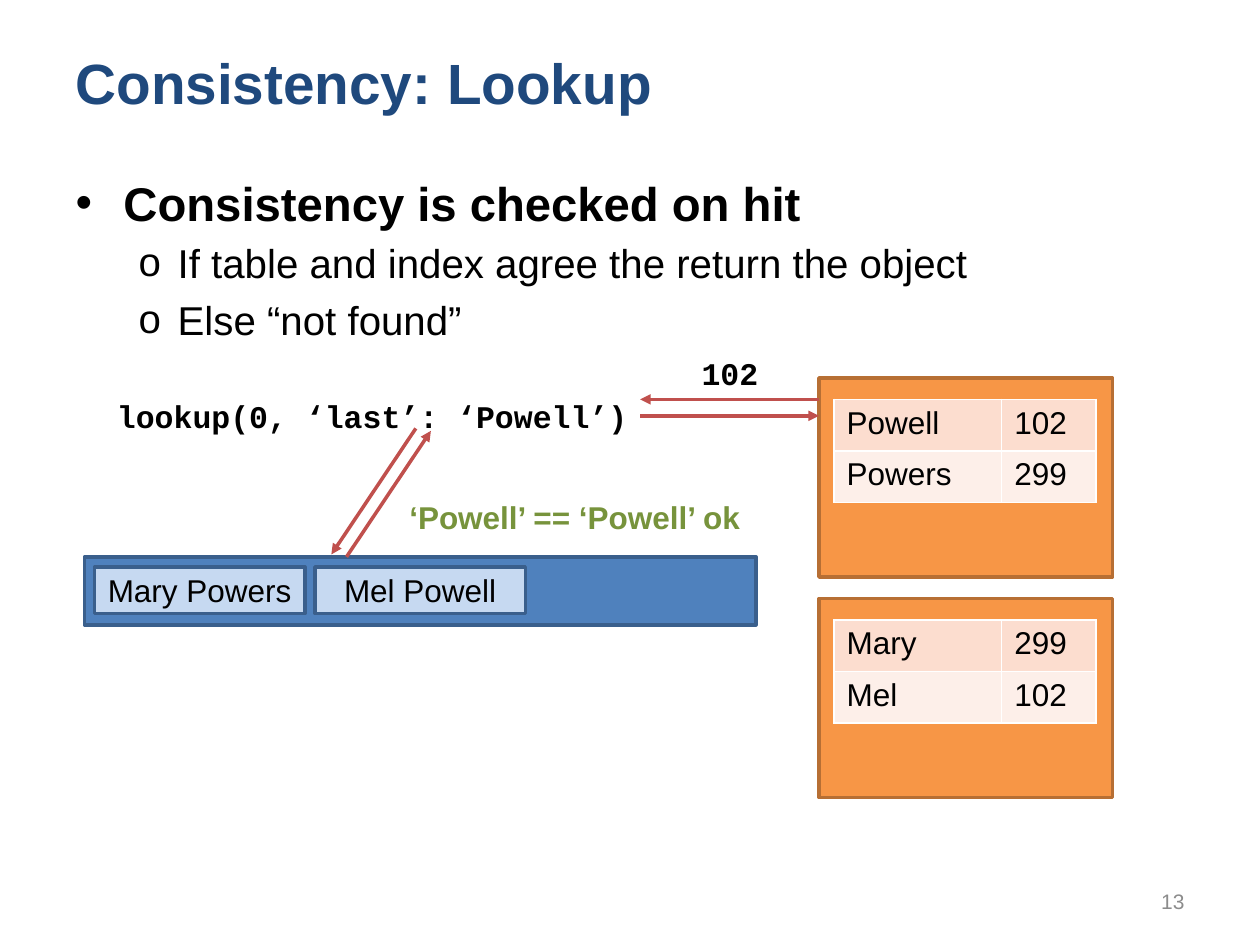
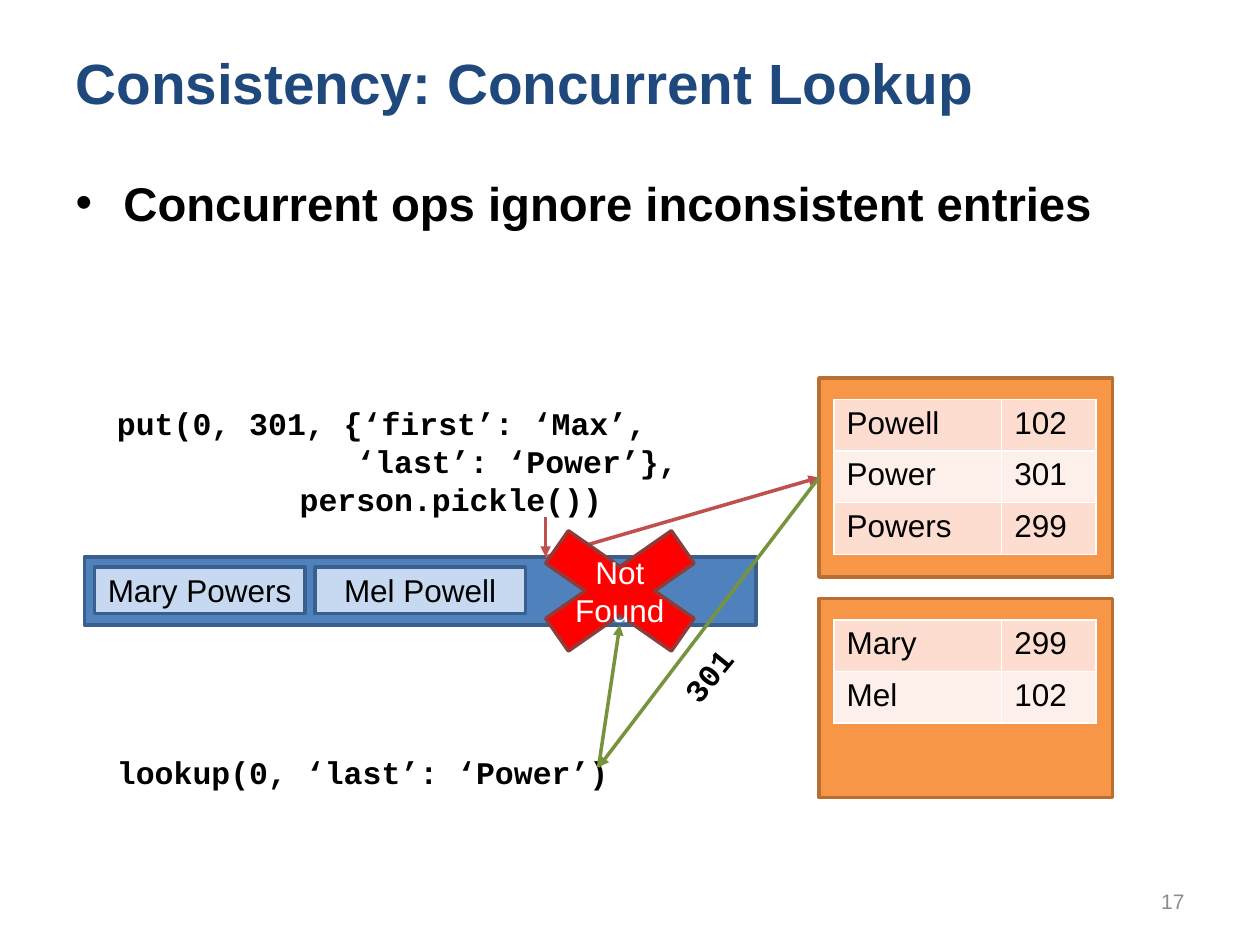
from dataclasses import dataclass

from lxml.etree import SubElement
from pptx import Presentation
from pptx.dml.color import RGBColor
from pptx.enum.shapes import MSO_CONNECTOR, MSO_SHAPE as Shape
from pptx.enum.text import MSO_ANCHOR as Anchor, MSO_AUTO_SIZE as AutoSize, PP_ALIGN as Align
from pptx.oxml.ns import qn
from pptx.util import Inches, Pt


@dataclass(frozen=True)
class Theme:
    sans: str = "Arial"
    mono: str = "Courier New"
    title: str = "1F497D"
    ink: str = "000000"
    white: str = "FFFFFF"
    muted: str = "8C8C8C"
    panel: tuple = ("F79646", "B76F34")
    bar: tuple = ("4F81BD", "3A5F8C")
    record: tuple = ("C6D9F1", "3A5F8C")
    failure: tuple = ("FF0000", "8E3B39")
    bands: tuple = ("FCDDCF", "FDEFE9")
    red: str = "C0504D"
    green: str = "77933C"
    title_size: float = 32.4
    text_size: float = 18
    number_size: float = 12
    stroke: float = 2


THEME = Theme()

# Shared layout, in inches
TITLE_AREA = (0.5, 0.3, 9, 0.7)
BODY_AREA = (0.5, 1.33, 9, 5.37)
NUMBER_AREA = (7.17, 6.95, 2.33, 0.4)
PANEL_LEFT, PANEL_TOP, PANEL_WIDTH, PANEL_HEIGHT, PANEL_PITCH = 6.5, 3, 2.33, 1.58, 1.75
INDEX_INSET = (0.12, 0.17)
INDEX_COLUMNS, INDEX_ROW = (1.33, 0.75), 0.41
BAR_AREA = (0.67, 4.42, 5.33, 0.54)
BAR_INSET, RECORD_WIDTH, RECORD_HEIGHT, RECORD_PITCH = 0.08, 1.67, 0.37, 1.75
CODE_LEFT, CODE_WIDTH, LINE_HEIGHT = 0.83, 8.33, 0.4
ID_WIDTH = 0.67

BAR_TOP = BAR_AREA[1]
BAR_BOTTOM = BAR_TOP + BAR_AREA[3]
PANEL_MIDDLE = PANEL_TOP + PANEL_HEIGHT / 2

# Bullet, left margin, hanging indent, size and weight of each list level
LEVELS = (("•", 0.38, 0.38, 27, True), ("o", 0.81, 0.31, 23, False))

RECORDS = ("Mary Powers", "Mel Powell")
FIRST_NAMES = [("Mary", "299"), ("Mel", "102")]

LOOKUP = {
    "title": "Consistency: Lookup",
    "number": "13",
    "points": [
        (0, "Consistency is checked on hit"),
        (1, "If table and index agree the return the object"),
        (1, "Else “not found”"),
    ],
    "last_names": [("Powell", "102"), ("Powers", "299")],
    # Top of each call, then its lines with their indents
    "calls": [(3.1, [(0, "lookup(0, ‘last’: ‘Powell’)")])],
    "found_id": ("102", 5.47, 2.76, 0),
    "check": ("‘Powell’ == ‘Powell’ ok", (3.15, 3.9, 2.85, LINE_HEIGHT)),
    "arrows": [
        ((5.08, 3.3), (PANEL_LEFT, 3.3), THEME.red),
        ((PANEL_LEFT, 3.17), (5.08, 3.17), THEME.red),
        ((3.3, 3.4), (2.63, 4.4), THEME.red),
        ((2.75, BAR_TOP), (3.42, 3.42), THEME.red),
    ],
}

LOOKUP_END = (4.75, 6.09)
NEW_RECORD = (4.33, BAR_TOP)
CONCURRENT = {
    "title": "Consistency: Concurrent Lookup",
    "number": "17",
    "points": [(0, "Concurrent ops ignore inconsistent entries")],
    "last_names": [("Powell", "102"), ("Power", "301"), ("Powers", "299")],
    "calls": [
        (3.16, [
            (0, "put(0, 301, {‘first’: ‘Max’,"),
            (1.9, "‘last’: ‘Power’},"),
            (1.45, "person.pickle())"),
        ]),
        (5.93, [(0, "lookup(0, ‘last’: ‘Power’)")]),
    ],
    "found_id": ("301", 5.29, 5.15, 309.1),
    "arrows": [
        ((NEW_RECORD[0], 4.1), NEW_RECORD, THEME.red),
        (NEW_RECORD, (PANEL_LEFT, PANEL_MIDDLE), THEME.red),
        (LOOKUP_END, (4.92, BAR_BOTTOM), THEME.green),
    ],
    "failure": ("Not Found", (3.96, 4.02, 1.92, 1.34)),
    "top_arrows": [((PANEL_LEFT, PANEL_MIDDLE), LOOKUP_END, THEME.green)],
}


def inches(area):
    return [Inches(length) for length in area]


def color(value):
    return RGBColor.from_string(value)


def add_span(para, text, size=THEME.text_size, ink=THEME.ink, bold=False, font=THEME.sans):
    span = para.add_run()
    span.text = text
    span.font.name = font
    span.font.size = Pt(size)
    span.font.bold = bold
    span.font.color.rgb = color(ink)


def next_para(frame, index):
    return frame.add_paragraph() if index else frame.paragraphs[0]


def place(shape, area):
    shape.left, shape.top, shape.width, shape.height = inches(area)


def add_box(shapes, kind, area, colors, text=None, ink=THEME.ink):
    box = shapes.add_shape(kind, *inches(area))
    box.shadow.inherit = False
    box.fill.solid()
    box.fill.fore_color.rgb = color(colors[0])
    box.line.color.rgb = color(colors[1])
    box.line.width = Pt(THEME.stroke)
    if text:
        box.text_frame.vertical_anchor = Anchor.MIDDLE
        para = box.text_frame.paragraphs[0]
        para.alignment = Align.CENTER
        add_span(para, text, ink=ink)


def add_text(page, area, lines, wrap=True, **style):
    """Add a text box; lines holds (left indent, text) pairs."""
    box = page.shapes.add_textbox(*inches(area))
    box.text_frame.word_wrap = wrap
    for index, (indent, text) in enumerate(lines):
        para = next_para(box.text_frame, index)
        if indent:
            para._p.get_or_add_pPr().set("marL", str(Inches(indent)))
        add_span(para, text, **style)
    return box


def add_code(page, area, lines):
    return add_text(page, area, lines, bold=True, font=THEME.mono)


def add_arrow(page, start, end, ink):
    arrow = page.shapes.add_connector(MSO_CONNECTOR.STRAIGHT, *inches(start + end))
    arrow.line.color.rgb = color(ink)
    arrow.line.width = Pt(THEME.stroke)
    SubElement(arrow.line._get_or_add_ln(), qn("a:tailEnd"), type="triangle")
    SubElement(arrow._element.spPr, qn("a:effectLst"))


def add_borders(cell):
    properties = cell._tc.get_or_add_tcPr()
    for side in "LRTB":
        edge = SubElement(properties, qn(f"a:ln{side}"), w=str(Pt(1)))
        SubElement(SubElement(edge, qn("a:solidFill")), qn("a:srgbClr"), val=THEME.white)


def add_index(page, position, entries):
    """Add an orange panel with a table of names and record ids."""
    top = PANEL_TOP + position * PANEL_PITCH
    add_box(page.shapes, Shape.RECTANGLE, (PANEL_LEFT, top, PANEL_WIDTH, PANEL_HEIGHT), THEME.panel)
    area = (PANEL_LEFT + INDEX_INSET[0], top + INDEX_INSET[1],
            sum(INDEX_COLUMNS), INDEX_ROW * len(entries))
    table = page.shapes.add_table(len(entries), len(INDEX_COLUMNS), *inches(area)).table
    table.first_row = table.horz_banding = False
    for column, width in zip(table.columns, INDEX_COLUMNS):
        column.width = Inches(width)
    for row, entry in enumerate(entries):
        table.rows[row].height = Inches(INDEX_ROW)
        for column, text in enumerate(entry):
            cell = table.cell(row, column)
            add_borders(cell)
            cell.fill.solid()
            cell.fill.fore_color.rgb = color(THEME.bands[row % 2])
            add_span(cell.text_frame.paragraphs[0], text)


def add_records(page):
    group = page.shapes.add_group_shape()
    add_box(group.shapes, Shape.RECTANGLE, BAR_AREA, THEME.bar)
    for index, name in enumerate(RECORDS):
        left = BAR_AREA[0] + BAR_INSET + index * RECORD_PITCH
        area = (left, BAR_TOP + BAR_INSET, RECORD_WIDTH, RECORD_HEIGHT)
        add_box(group.shapes, Shape.RECTANGLE, area, THEME.record, name)


def fill_title(page, text):
    title = page.shapes.title
    place(title, TITLE_AREA)
    title.text_frame.auto_size = AutoSize.NONE
    title.text_frame.vertical_anchor = Anchor.MIDDLE
    para = title.text_frame.paragraphs[0]
    para.alignment = Align.LEFT
    add_span(para, text, THEME.title_size, THEME.title, bold=True)


def fill_body(page, points):
    body = page.placeholders[1]
    place(body, BODY_AREA)
    body.text_frame.auto_size = AutoSize.NONE
    for index, (level, text) in enumerate(points):
        bullet, margin, hanging, size, bold = LEVELS[level]
        para = next_para(body.text_frame, index)
        para.level = level
        properties = para._p.get_or_add_pPr()
        properties.set("marL", str(Inches(margin)))
        properties.set("indent", str(-Inches(hanging)))
        SubElement(properties, qn("a:buFont"), typeface=THEME.sans)
        SubElement(properties, qn("a:buChar"), char=bullet)
        add_span(para, text, size, bold=bold)


def add_number(page, number):
    box = add_text(page, NUMBER_AREA, [(0, number)], size=THEME.number_size, ink=THEME.muted)
    box.text_frame.vertical_anchor = Anchor.MIDDLE
    box.text_frame.paragraphs[0].alignment = Align.RIGHT


def add_page(deck, content):
    page = deck.slides.add_slide(deck.slide_layouts[1])
    fill_title(page, content["title"])
    fill_body(page, content["points"])
    for position, entries in enumerate((content["last_names"], FIRST_NAMES)):
        add_index(page, position, entries)
    add_records(page)
    for top, lines in content["calls"]:
        add_code(page, (CODE_LEFT, top, CODE_WIDTH, LINE_HEIGHT * len(lines)), lines)
    for arrow in content["arrows"]:
        add_arrow(page, *arrow)
    if "check" in content:
        text, area = content["check"]
        add_text(page, area, [(0, text)], wrap=False, ink=THEME.green, bold=True)
    if "failure" in content:
        text, area = content["failure"]
        add_box(page.shapes, Shape.MATH_MULTIPLY, area, THEME.failure, text, THEME.white)
    for arrow in content.get("top_arrows", ()):
        add_arrow(page, *arrow)
    text, left, top, angle = content["found_id"]
    add_code(page, (left, top, ID_WIDTH, LINE_HEIGHT), [(0, text)]).rotation = angle
    add_number(page, content["number"])


def main():
    deck = Presentation()
    deck.slide_width, deck.slide_height = Inches(10), Inches(7.5)
    for content in (LOOKUP, CONCURRENT):
        add_page(deck, content)
    deck.save("out.pptx")


if __name__ == "__main__":
    main()
